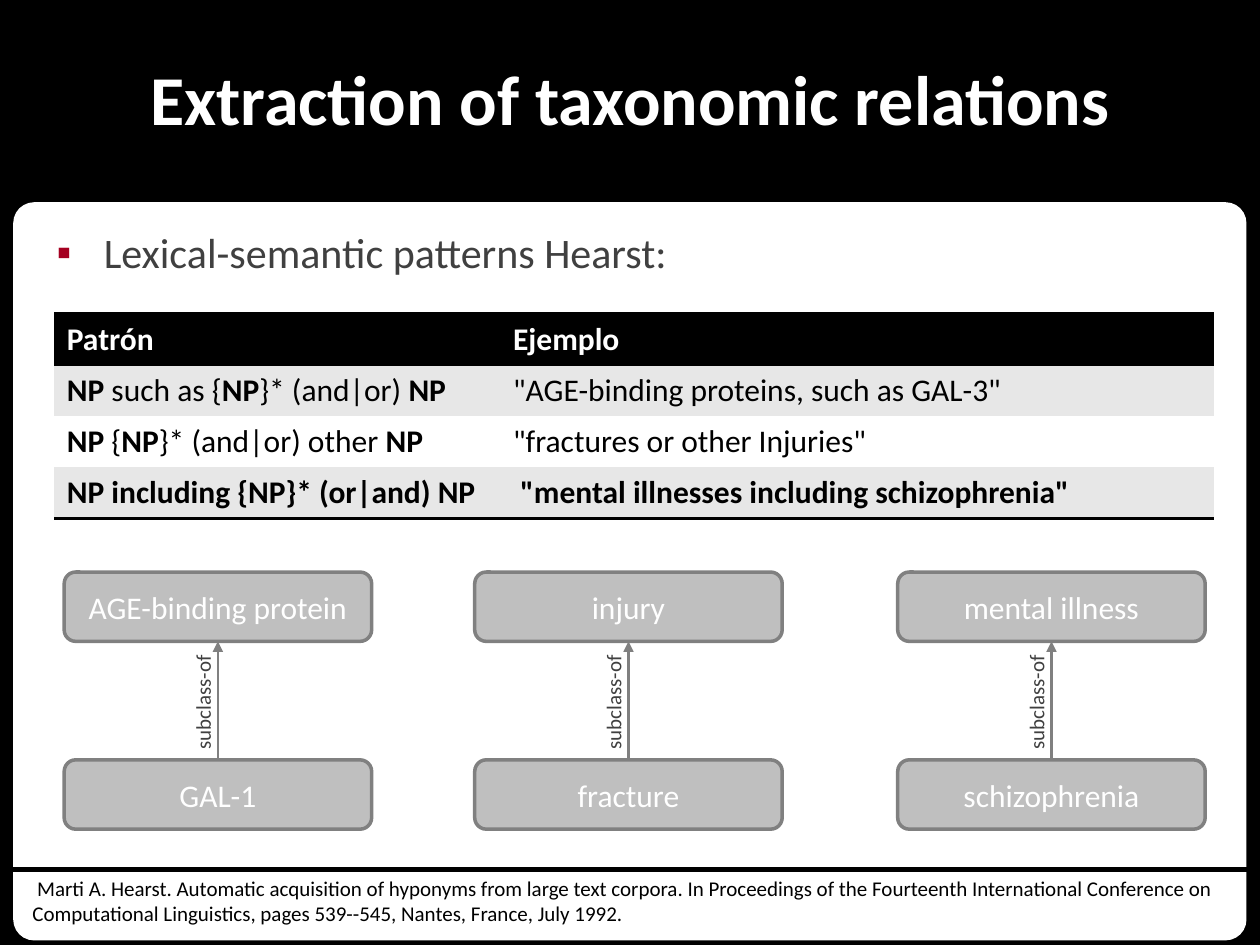
from lxml import etree
from pptx import Presentation
from pptx.dml.color import RGBColor
from pptx.enum import shapes, text
from pptx.oxml import ns
from pptx.util import Pt

BLACK = RGBColor(0x00, 0x00, 0x00)
WHITE = RGBColor(0xFF, 0xFF, 0xFF)
DARK_GRAY = RGBColor(0x40, 0x40, 0x40)
MID_GRAY = RGBColor(0x80, 0x80, 0x80)
NODE_GRAY = RGBColor(0xBF, 0xBF, 0xBF)
BAND_GRAY = RGBColor(0xE7, 0xE7, 0xE7)
BULLET_RED = "A50021"
FONT = "Calibri"
PLAIN_TABLE_STYLE = "{2D5ABB26-0587-4C30-8999-92F81FD0307C}"

PATTERNS = [
    ("Patrón", "Ejemplo"),
    ("NP such as {NP}* (and|or) NP", '"AGE-binding proteins, such as GAL-3"'),
    ("NP {NP}* (and|or) other NP", '"fractures or other Injuries"'),
    ("NP including {NP}* (or|and) NP", ' "mental illnesses including schizophrenia"'),
]
RELATIONS = [
    (36.7, "AGE-binding protein", "GAL-1"),
    (271.3, "injury", "fracture"),
    (513, "mental illness", "schizophrenia"),
]
CITATION = (
    " Marti A. Hearst. Automatic acquisition of hyponyms from large text corpora. "
    "In Proceedings of the Fourteenth International Conference on Computational "
    "Linguistics, pages 539--545, Nantes, France, July 1992."
)


def add_xml(parent, tag, **attributes):
    return etree.SubElement(parent, ns.qn(tag), attributes)


def format_run(run, size, color, bold=False):
    run.font.name = FONT
    run.font.size = Pt(size)
    run.font.color.rgb = color
    run.font.bold = bold


def write(shape, words, size, color, bold=False, align=text.PP_ALIGN.LEFT):
    paragraph = shape.text_frame.paragraphs[0]
    paragraph.text = words
    paragraph.alignment = align
    format_run(paragraph.runs[0], size, color, bold)
    return paragraph


def add_box(slide, kind, box, fill, line=None):
    shape = slide.shapes.add_shape(kind, *map(Pt, box))
    shape.shadow.inherit = False
    shape.fill.solid()
    shape.fill.fore_color.rgb = fill
    if line is None:
        shape.line.fill.background()
    else:
        shape.line.color.rgb = line
        shape.line.width = Pt(2)
    shape.text_frame.vertical_anchor = text.MSO_ANCHOR.MIDDLE
    return shape


def add_textbox(slide, box, wrap=True):
    textbox = slide.shapes.add_textbox(*map(Pt, box))
    textbox.text_frame.word_wrap = wrap
    return textbox


def add_line(slide, start, end, color, width):
    line = slide.shapes.add_connector(
        shapes.MSO_CONNECTOR.STRAIGHT, *map(Pt, start + end))
    line.line.color.rgb = color
    line.line.width = Pt(width)
    add_xml(line._element.spPr, "a:effectLst")
    return line


def add_title(slide, box):
    title = add_box(slide, shapes.MSO_SHAPE.RECTANGLE, box, BLACK)
    write(title, "Extraction of taxonomic relations", 40, WHITE, True,
          text.PP_ALIGN.CENTER)


def add_panel(slide, box):
    panel = add_box(slide, shapes.MSO_SHAPE.ROUNDED_RECTANGLE, box, WHITE, WHITE)
    panel.adjustments[0] = 0.026


def add_bullet(slide, box):
    paragraph = write(add_textbox(slide, box), "Lexical-semantic patterns Hearst:",
                      24, DARK_GRAY)
    paragraph.space_before = Pt(4.8)
    properties = paragraph._p.get_or_add_pPr()
    properties.set("marL", str(Pt(27)))
    properties.set("indent", str(-Pt(27)))
    add_xml(add_xml(properties, "a:buClr"), "a:srgbClr", val=BULLET_RED)
    add_xml(properties, "a:buFont", typeface="Arial")
    add_xml(properties, "a:buChar", char="▪")


def set_border(cell, side):
    """Put a black 2-point border on side "T" or "B"; call before filling the cell."""
    properties = cell._tc.get_or_add_tcPr()
    border = add_xml(properties, f"a:ln{side}", w=str(Pt(2)))
    add_xml(add_xml(border, "a:solidFill"), "a:srgbClr", val=str(BLACK))


def write_pattern(cell, words, color, all_bold):
    """Write the words with every NP in bold."""
    paragraph = cell.text_frame.paragraphs[0]
    for index, part in enumerate(words.split("NP")):
        if index:
            run = paragraph.add_run()
            run.text = "NP"
            format_run(run, 18, color, True)
        if part:
            run = paragraph.add_run()
            run.text = part
            format_run(run, 18, color, all_bold)


def add_pattern_table(slide, box, column_widths):
    table = slide.shapes.add_table(len(PATTERNS), 2, *map(Pt, box)).table
    table.first_row = table.horz_banding = False
    table._tbl.tblPr.find(ns.qn("a:tableStyleId")).text = PLAIN_TABLE_STYLE
    for column, width in zip(table.columns, column_widths):
        column.width = Pt(width)
    last = len(PATTERNS) - 1
    for row, entries in enumerate(PATTERNS):
        table.rows[row].height = Pt(box[3] / len(PATTERNS))
        fill = BLACK if row == 0 else BAND_GRAY if row % 2 else WHITE
        for column, words in enumerate(entries):
            cell = table.cell(row, column)
            if row == 0:
                set_border(cell, "T")
            if row in (0, last):
                set_border(cell, "B")
            cell.fill.solid()
            cell.fill.fore_color.rgb = fill
            write_pattern(cell, words, BLACK if row else WHITE, row in (0, last))


def add_relation(slide, box, parent_name, child_name):
    """Two nodes at the top and bottom of the box, joined by a subclass arrow."""
    left, top, width, height = box
    node_height = 39.6
    nodes = []
    for name, node_top in ((parent_name, top),
                           (child_name, top + height - node_height)):
        node = add_box(slide, shapes.MSO_SHAPE.ROUNDED_RECTANGLE,
                       (left, node_top, width, node_height), NODE_GRAY, MID_GRAY)
        write(node, name, 18, WHITE, align=text.PP_ALIGN.CENTER)
        nodes.append(node)
    parent, child = nodes
    axis, middle = left + width / 2, top + height / 2
    arrow = add_line(slide, (axis, middle), (axis, middle), MID_GRAY, 1.5)
    arrow.begin_connect(child, 0)
    arrow.end_connect(parent, 2)
    add_xml(arrow.line._get_or_add_ln(), "a:tailEnd", type="triangle")

    label_width, label_height = 69, 21.8
    label = add_textbox(slide, (axis - 8.7 - label_width / 2,
                                middle + 0.7 - label_height / 2,
                                label_width, label_height), wrap=False)
    label.rotation = 270
    write(label, "subclass-of", 12, DARK_GRAY)


def add_citation(slide, box):
    left, top, width, height = box
    write(add_textbox(slide, (left + 11.5, top, width - 22.5, height)),
          CITATION, 12, BLACK)
    add_line(slide, (left, top), (left + width, top), BLACK, 3)


def main():
    presentation = Presentation()
    presentation.slide_width, presentation.slide_height = Pt(720), Pt(540)
    slide = presentation.slides.add_slide(presentation.slide_layouts[6])
    slide.background.fill.solid()
    slide.background.fill.fore_color.rgb = BLACK

    add_panel(slide, (8.6, 116.6, 702.7, 419.8))
    add_title(slide, (0, 0, 720, 111.6))
    add_bullet(slide, (25.2, 126, 669, 356.4))
    add_pattern_table(slide, (31, 179.3, 663, 116.8), (255, 408))
    for left, parent_name, child_name in RELATIONS:
        add_relation(slide, (left, 326.9, 175.7, 146.9), parent_name, child_name)
    add_citation(slide, (0, 496.8, 720, 43.2))
    presentation.save("out.pptx")


if __name__ == "__main__":
    main()
